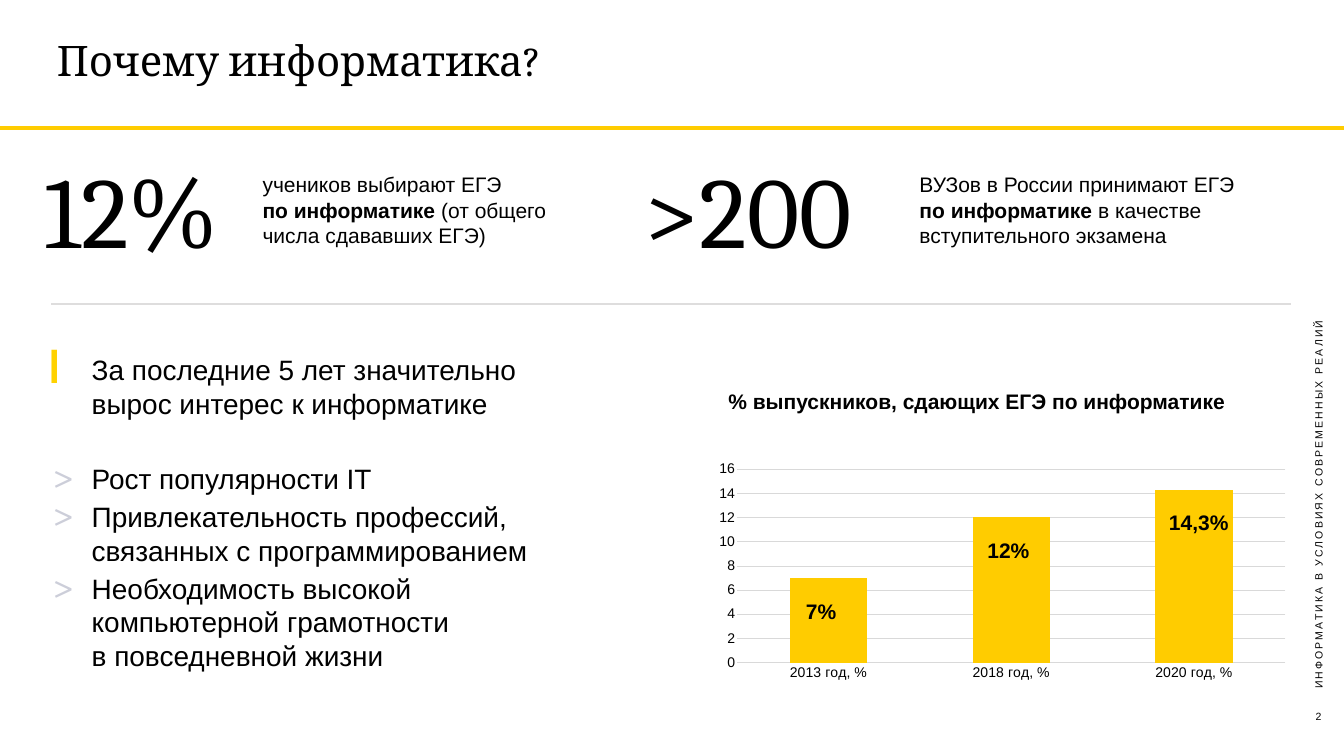
"""Build the slide on why pupils choose informatics."""
from lxml import etree
from pptx import Presentation
from pptx import util as u
from pptx.chart import data
from pptx.dml.color import RGBColor
from pptx.enum import chart as ch, shapes, text
from pptx.oxml import parse_xml
from pptx.oxml.ns import nsdecls, qn


class Theme:
    """Colours, fonts and type sizes."""
    ink, gold, mark = "000000", "FFCC00", "FFD200"
    rule, grid, pale = "DEDDDD", "D9D9D9", "CCCED9"
    sans, serif = "Arial", "Cambria"
    huge, head, list, body, axis, small = 144, 60, 40, 30, 20, 15


SIZE = (67.72, 38.1)
TITLE = "Почему информатика?"
SIDE = "ИНФОРМАТИКА В УСЛОВИЯХ СОВРЕМЕННЫХ РЕАЛИЙ"
PAGE = "2"
FACTS = [
    ("12%", (2.26, 12.29), (13.23, 14.94),
     [("учеников выбирают ЕГЭ\n", False), ("по информатике", True),
      (" (от общего числа сдававших ЕГЭ)", False)]),
    (">200", (32.44, 14.4), (46.33, 18.29),
     [("ВУЗов в России принимают ЕГЭ\n", False), ("по информатике ", True),
      ("в качестве вступительного экзамена", False)]),
]
LEAD = "За последние 5 лет значительно\nвырос интерес к информатике"
CAUSES = [
    "Рост популярности IT",
    "Привлекательность профессий, связанных с программированием",
    "Необходимость высокой компьютерной грамотности\nв повседневной жизни",
]
CHART = "% выпускников, сдающих ЕГЭ по информатике"
YEARS = ["2013 год, %", "2018 год, %", "2020 год, %"]
RATES = [7, 12, 14.3]
TAGS = [("7%", 40.36, 30.05, 2.06), ("12%", 49.5, 26.95, 2.64),
        ("14,3%", 58.65, 25.55, 3.53)]
RULES = [(-0.69, 68.43, 6.45, Theme.gold, 5),
         (2.57, 65.07, 15.34, Theme.rule, 3)]
PLOT = {"x": 0.046, "y": 0.253, "w": 0.941, "h": 0.537}


def tint(name):
    return RGBColor.from_string(name)


def style(font, size, face=Theme.sans, bold=None):
    font.size, font.name, font.bold = u.Pt(size), face, bold
    font.color.rgb = tint(Theme.ink)


def frame(slide, box, pad=None, mid=False, wrap=True):
    shape = slide.shapes.add_textbox(*map(u.Cm, box))
    body = shape.text_frame
    body.word_wrap = wrap
    if pad is not None:
        body.margin_left = body.margin_right = body.margin_bottom = 0
        body.margin_top = u.Cm(pad)
    if mid:
        body.vertical_anchor = text.MSO_ANCHOR.MIDDLE
    return shape


def write(para, runs, size, face=Theme.sans, bold=None, gap=None, space=None):
    if space:
        para.line_spacing = space
    style(para.font, size, face, bold)
    for words, heavy in runs:
        for i, line in enumerate(words.split("\n")):
            if i:
                para.add_line_break()
            if line:
                run = para.add_run()
                run.text = line
                if heavy:
                    run.font.bold = True
                if gap:
                    run._r.get_or_add_rPr().set("spc", str(gap * 100))


def label(slide, words, box, size, pad=None, mid=False, wrap=True, **look):
    shape = frame(slide, box, pad, mid, wrap)
    write(shape.text_frame.paragraphs[0], [(words, False)], size, **look)
    return shape


def bullet(para, sign, color, scale=None, face=None):
    props = para._p.get_or_add_pPr()
    props.set("marL", str(u.Cm(2)))
    props.set("indent", str(-u.Cm(2)))
    hue = etree.SubElement(props, qn("a:buClr"))
    etree.SubElement(hue, qn("a:srgbClr"), val=color)
    if scale:
        etree.SubElement(props, qn("a:buSzPct"), val=str(scale * 1000))
    if face:
        etree.SubElement(props, qn("a:buFont"), typeface=face)
    etree.SubElement(props, qn("a:buChar"), char=sign)


def causes(slide):
    body = frame(slide, (2.62, 17.78, 26.9, 17.35), 0).text_frame
    para = body.paragraphs[0]
    bullet(para, "▎", Theme.mark)
    write(para, [(LEAD, False)], Theme.list)
    for i, cause in enumerate(CAUSES):
        para = body.add_paragraph()
        para.space_before = u.Pt(6 if i else 60)
        bullet(para, ">", Theme.pale, 145, Theme.serif)
        write(para, [(cause, False)], Theme.list)


def rule(slide, left, right, top, color, width):
    line = slide.shapes.add_connector(
        shapes.MSO_CONNECTOR.STRAIGHT,
        u.Cm(left), u.Cm(top), u.Cm(right), u.Cm(top))
    line.line.color.rgb, line.line.width = tint(color), u.Pt(width)
    etree.SubElement(line._element.spPr, qn("a:effectLst"))


def graph(slide):
    table = data.CategoryChartData()
    table.categories = YEARS
    table.add_series("Series 1", RATES)
    box = map(u.Cm, (35.79, 19.05, 29.36, 18.16))
    chart = slide.shapes.add_chart(
        ch.XL_CHART_TYPE.COLUMN_CLUSTERED, *box, table).chart
    chart.has_legend = chart.has_title = False
    style(chart.font, Theme.axis)
    plot = chart.plots[0]
    plot.gap_width, plot.overlap, plot.vary_by_categories = 137, -27, False
    fill = plot.series[0].format.fill
    fill.solid()
    fill.fore_color.rgb = tint(Theme.gold)
    cat, val = chart.category_axis, chart.value_axis
    for axis in (cat, val):
        axis.major_tick_mark = axis.minor_tick_mark = ch.XL_TICK_MARK.NONE
        style(axis.tick_labels.font, Theme.axis)
    val.minimum_scale, val.maximum_scale, val.major_unit = 0, 16, 2
    val.format.line.fill.background()
    for line in (cat.format.line, val.major_gridlines.format.line):
        line.color.rgb, line.width = tint(Theme.grid), u.Pt(0.75)
    sizes = "".join(f'<c:{k} val="{v}"/>' for k, v in PLOT.items())
    area = chart._chartSpace.chart.plotArea
    for old in area.findall(qn("c:layout")):
        area.remove(old)
    area.insert(0, parse_xml(
        f'<c:layout {nsdecls("c")}><c:manualLayout>'
        '<c:layoutTarget val="inner"/><c:xMode val="edge"/>'
        f'<c:yMode val="edge"/>{sizes}</c:manualLayout></c:layout>'))


def main():
    deck = Presentation()
    deck.slide_width, deck.slide_height = map(u.Cm, SIZE)
    slide = deck.slides.add_slide(deck.slide_layouts[6])
    for item in RULES:
        rule(slide, *item)
    for figure, (left, width), (start, span), runs in FACTS:
        label(slide, figure, (left, 6.96, width, 6.45), Theme.huge,
              pad=0.61, mid=True, face=Theme.serif)
        note = frame(slide, (start, 8.66, span, 4.39), 0)
        write(note.text_frame.paragraphs[0], runs, Theme.body)
    causes(slide)
    side = label(slide, SIDE, (56.62, 24.74, 19.63, 0.81), Theme.small,
                 mid=True, gap=3)
    side.rotation = 270
    page = label(slide, PAGE, (65.84, 35.64, 1.19, 2.03), Theme.small)
    page.text_frame.paragraphs[0].alignment = text.PP_ALIGN.CENTER
    graph(slide)
    label(slide, CHART, (36.7, 19.74, 27.91, 1.73), Theme.body,
          pad=0, bold=True, space=0.9)
    for words, left, top, width in TAGS:
        label(slide, words, (left, top, width, 1.55), Theme.body,
              wrap=False, bold=True)
    label(slide, TITLE, (2.62, 0, 62.46, 6.35), Theme.head,
          mid=True, face=Theme.serif, space=0.9)
    deck.save("out.pptx")


if __name__ == "__main__":
    main()
